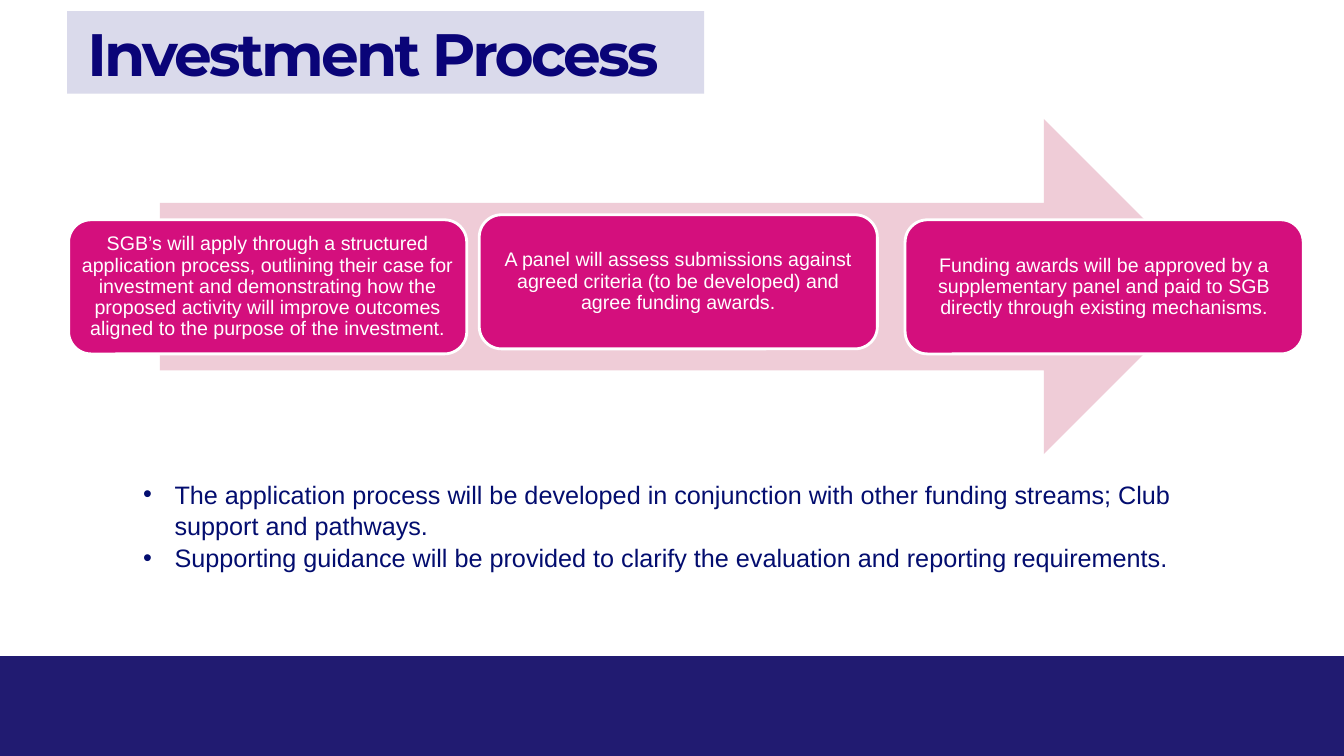
from pptx import Presentation
from pptx.dml.color import RGBColor
from pptx.enum.shapes import MSO_SHAPE as SHAPE
from pptx.enum.text import MSO_ANCHOR as ANCHOR, MSO_AUTO_SIZE as AUTO, PP_ALIGN as ALIGN
from pptx.util import Pt

NAVY = RGBColor(0x21, 0x1B, 0x71)
TITLE_BLUE = RGBColor(0x0A, 0x04, 0x78)
TEXT_BLUE = RGBColor(0x03, 0x0D, 0x6F)
LILAC = RGBColor(0xDA, 0xDA, 0xEB)
ROSE = RGBColor(0xEF, 0xCC, 0xD7)
MAGENTA = RGBColor(0xD4, 0x0F, 0x7D)
WHITE = RGBColor(0xFF, 0xFF, 0xFF)

TITLE_FONT = {"name": "Montserrat", "size": Pt(42.7), "bold": True}
STEP_FONT = {"name": "Arial", "size": Pt(14)}
LIST_FONT = {"name": "Arial", "size": Pt(18)}

STEP_SIZE = (284.4, 95.8)
STEPS = [
    (49, 157, "SGB’s will apply through a structured application process, outlining "
     "their case for investment and demonstrating how the proposed activity will "
     "improve outcomes aligned to the purpose of the investment."),
    (342.3, 153.4, "A panel will assess submissions against agreed criteria "
     "(to be developed) and agree funding awards."),
    (646.5, 157, "Funding awards will be approved by a supplementary panel and paid "
     "to SGB directly through existing mechanisms."),
]
NOTES = [
    "The application process will be developed in conjunction with other funding "
    "streams; Club support and pathways.",
    "Supporting guidance will be provided to clarify the evaluation and reporting "
    "requirements.",
]


def set_attrs(obj, values):
    for name, value in values.items():
        setattr(obj, name, value)


def place(sp, left, top, width, height):
    set_attrs(sp, {"left": Pt(left), "top": Pt(top),
                   "width": Pt(width), "height": Pt(height)})


def set_frame(tf, anchor, side, edge):
    set_attrs(tf, {"word_wrap": True, "auto_size": AUTO.NONE,
                   "vertical_anchor": anchor,
                   "margin_left": Pt(side), "margin_right": Pt(side),
                   "margin_top": Pt(edge), "margin_bottom": Pt(edge)})


def write(p, text, font, color, **layout):
    r = p.add_run()
    r.text = text
    set_attrs(r.font, font)
    r.font.color.rgb = color
    set_attrs(p, {"space_before": Pt(0), "space_after": Pt(0), **layout})
    return r


def add_block(s, kind, box, color):
    sp = s.shapes.add_shape(kind, *map(Pt, box))
    sp.shadow.inherit = False
    sp.fill.solid()
    sp.fill.fore_color.rgb = color
    sp.line.fill.background()
    return sp


def add_step(s, left, top, text):
    sp = add_block(s, SHAPE.ROUNDED_RECTANGLE, (left, top, *STEP_SIZE), MAGENTA)
    sp.line.color.rgb = WHITE
    sp.line.width = Pt(2)
    set_frame(sp.text_frame, ANCHOR.MIDDLE, 4, 4)
    write(sp.text_frame.paragraphs[0], text, STEP_FONT, WHITE,
          alignment=ALIGN.CENTER, line_spacing=0.9)


def fill_title(sp, text):
    place(sp, 48, 8, 455, 59)
    sp.fill.solid()
    sp.fill.fore_color.rgb = LILAC
    set_frame(sp.text_frame, ANCHOR.MIDDLE, 14.4, 3.6)
    r = write(sp.text_frame.paragraphs[0], text, TITLE_FONT, TITLE_BLUE,
              alignment=ALIGN.LEFT)
    r.font._element.set("spc", "-200")


def fill_list(sp, items):
    place(sp, 95, 337.5, 780, 73)
    tf = sp.text_frame
    set_frame(tf, ANCHOR.TOP, 7.2, 3.6)
    for i, text in enumerate(items):
        p = tf.add_paragraph() if i else tf.paragraphs[0]
        pPr = p._p.get_or_add_pPr()
        pPr.set("marL", str(Pt(22.5)))
        pPr.set("indent", str(-Pt(22.5)))
        write(p, text, LIST_FONT, TEXT_BLUE, alignment=ALIGN.LEFT, line_spacing=1.05)


def main():
    prs = Presentation()
    set_attrs(prs, {"slide_width": Pt(960), "slide_height": Pt(540)})
    s = prs.slides.add_slide(prs.slide_layouts[1])
    fill_title(s.shapes.title, "Investment Process")
    fill_list(s.placeholders[1], NOTES)
    add_block(s, SHAPE.RECTANGLE, (0, 468.7, 960, 71.3), NAVY)
    add_block(s, SHAPE.RIGHT_ARROW, (114.3, 85, 751, 239.4), ROSE)
    for left, top, text in STEPS:
        add_step(s, left, top, text)
    prs.save("out.pptx")


if __name__ == "__main__":
    main()
